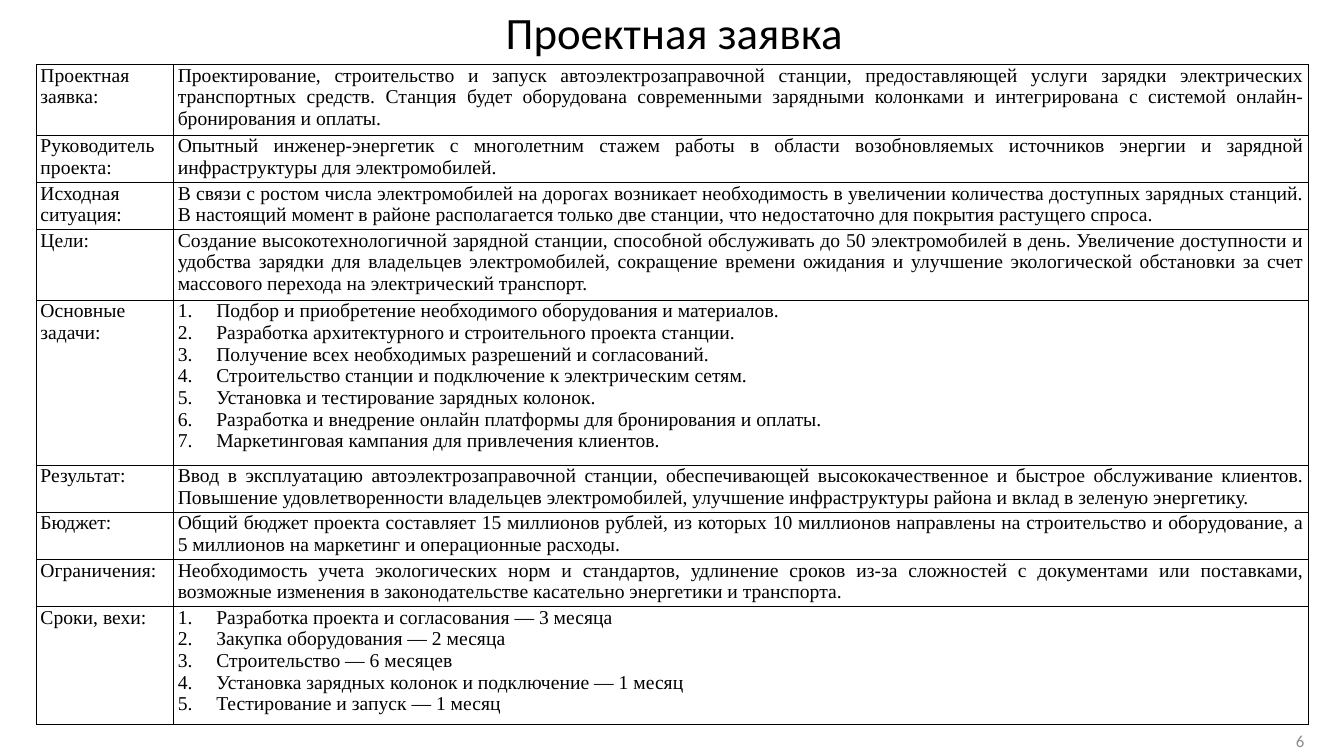
"""Builds the project application slide: a title, a table and a page number."""
from lxml import etree
from pptx import Presentation
from pptx import util as u
from pptx.dml.color import RGBColor
from pptx.enum import text as t
from pptx.oxml import ns

THEME = {
    "ink": "000000", "grey": "8C8C8C",
    "sans": "Calibri", "serif": "Times New Roman",
    "head": 32, "body": 14, "foot": 12, "rule": 1,
}
ROWS = [
    ("Проектная заявка:", 1.77, "Проектирование, строительство и запуск автоэлектрозаправочной станции, предоставляющей услуги зарядки электрических транспортных средств. Станция будет оборудована современными зарядными колонками и интегрирована с системой онлайн-бронирования и оплаты."),
    ("Руководитель проекта:", 1.19, "Опытный инженер-энергетик с многолетним стажем работы в области возобновляемых источников энергии и зарядной инфраструктуры для электромобилей."),
    ("Исходная ситуация:", 1.19, "В связи с ростом числа электромобилей на дорогах возникает необходимость в увеличении количества доступных зарядных станций. В настоящий момент в районе располагается только две станции, что недостаточно для покрытия растущего спроса."),
    ("Цели:", 1.77, "Создание высокотехнологичной зарядной станции, способной обслуживать до 50 электромобилей в день. Увеличение доступности и удобства зарядки для владельцев электромобилей, сокращение времени ожидания и улучшение экологической обстановки за счет массового перехода на электрический транспорт."),
    ("Основные задачи:", 4.15, [
        "Подбор и приобретение необходимого оборудования и материалов.",
        "Разработка архитектурного и строительного проекта станции.",
        "Получение всех необходимых разрешений и согласований.",
        "Строительство станции и подключение к электрическим сетям.",
        "Установка и тестирование зарядных колонок.",
        "Разработка и внедрение онлайн платформы для бронирования и оплаты.",
        "Маркетинговая кампания для привлечения клиентов.",
    ]),
    ("Результат:", 1.19, "Ввод в эксплуатацию автоэлектрозаправочной станции, обеспечивающей высококачественное и быстрое обслуживание клиентов. Повышение удовлетворенности владельцев электромобилей, улучшение инфраструктуры района и вклад в зеленую энергетику."),
    ("Бюджет:", 1.19, "Общий бюджет проекта составляет 15 миллионов рублей, из которых 10 миллионов направлены на строительство и оборудование, а 5 миллионов на маркетинг и операционные расходы."),
    ("Ограничения:", 1.19, "Необходимость учета экологических норм и стандартов, удлинение сроков из-за сложностей с документами или поставками, возможные изменения в законодательстве касательно энергетики и транспорта."),
    ("Сроки, вехи:", 2.95, [
        "Разработка проекта и согласования — 3 месяца",
        "Закупка оборудования — 2 месяца",
        "Строительство — 6 месяцев",
        "Установка зарядных колонок и подключение — 1 месяц",
        "Тестирование и запуск — 1 месяц",
    ]),
]


def write(frame, words, size="body", font="serif", ink="ink", align="JUSTIFY"):
    """Fills a text frame; a list of strings becomes a numbered list."""
    listed = isinstance(words, list)
    for i, line in enumerate(words if listed else [words]):
        para = frame.add_paragraph() if i else frame.paragraphs[0]
        para.alignment = t.PP_ALIGN[align]
        if listed:
            props = para._p.get_or_add_pPr()
            props.set("marL", str(u.Cm(0.97)))
            props.set("indent", str(-u.Cm(0.97)))
            etree.SubElement(props, ns.qn("a:buFont"), typeface="+mj-lt")
            etree.SubElement(props, ns.qn("a:buAutoNum"), type="arabicPeriod")
        run = para.add_run()
        run.text = line
        run.font.size = u.Pt(THEME[size])
        run.font.name = THEME[font]
        run.font.color.rgb = RGBColor.from_string(THEME[ink])


def frame_cell(cell):
    """Gives a cell thin insets, four border lines and no fill."""
    cell.margin_left = cell.margin_right = u.Cm(0.1)
    cell.margin_top = cell.margin_bottom = 0
    props = cell._tc.get_or_add_tcPr()
    for side in "LRTB":
        line = etree.SubElement(props, ns.qn(f"a:ln{side}"), w=str(u.Pt(THEME["rule"])))
        fill = etree.SubElement(line, ns.qn("a:solidFill"))
        etree.SubElement(fill, ns.qn("a:srgbClr"), val=THEME["ink"])
    cell.fill.background()


deck = Presentation()
deck.slide_width, deck.slide_height = u.Cm(33.87), u.Cm(19.05)
slide = deck.slides.add_slide(deck.slide_layouts[6])

title = slide.shapes.add_textbox(u.Cm(12.45), 0, u.Cm(9.09), u.Cm(1.63)).text_frame
title.word_wrap = False
title.auto_size = t.MSO_AUTO_SIZE.SHAPE_TO_FIT_TEXT
write(title, "Проектная заявка", size="head", font="sans", align="CENTER")

grid = slide.shapes.add_table(
    len(ROWS), 2, u.Cm(0.92), u.Cm(1.63), u.Cm(32.05), u.Cm(16.59)).table
grid.first_row = grid.horz_banding = False
for col, width in zip(grid.columns, (3.46, 28.59)):
    col.width = u.Cm(width)
for row, (label, height, words) in zip(grid.rows, ROWS):
    row.height = u.Cm(height)
    for cell, part in zip(row.cells, (label, words)):
        frame_cell(cell)
        write(cell.text_frame, part)

page = slide.shapes.add_textbox(u.Cm(23.93), u.Cm(18.31), u.Cm(9.19), u.Cm(0.74)).text_frame
page.word_wrap = True
page.vertical_anchor = t.MSO_ANCHOR.MIDDLE
write(page, "6", size="foot", font="sans", ink="grey", align="RIGHT")

deck.save("out.pptx")
